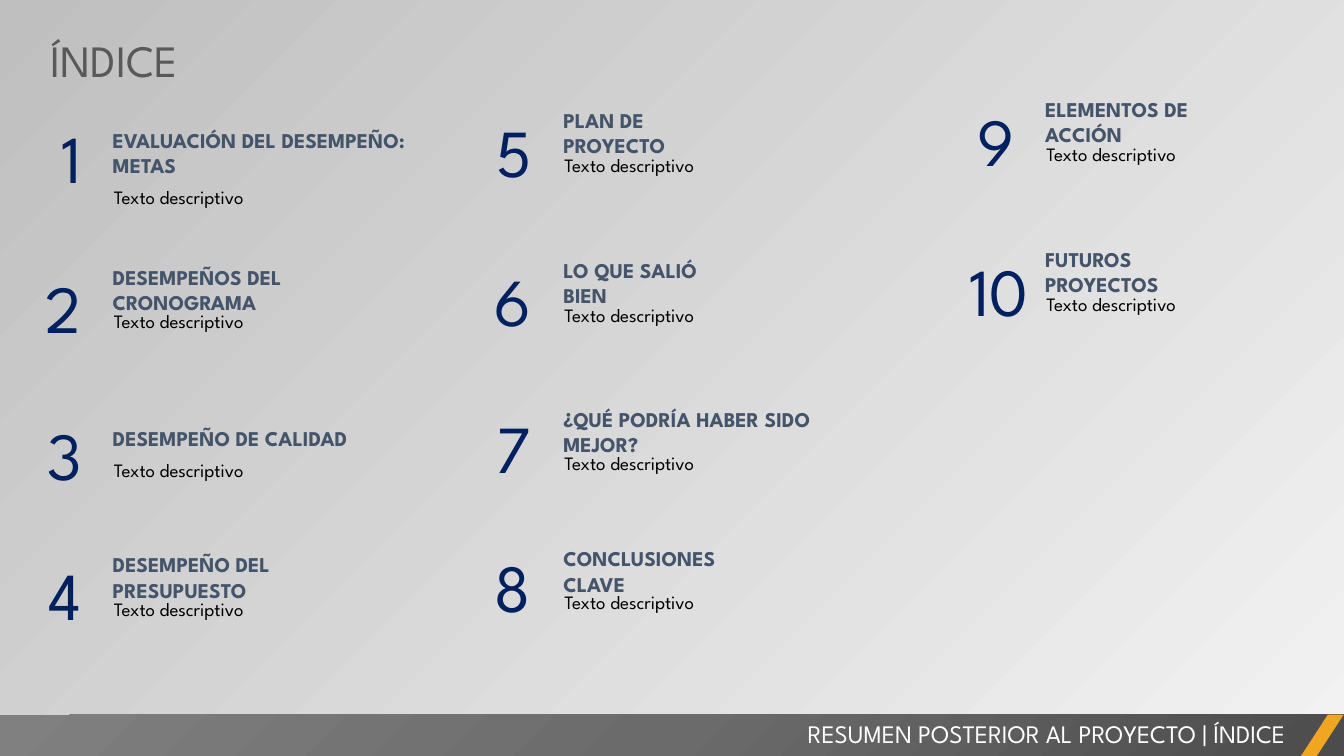
import pptx
import pptx.util
import pptx.oxml
import pptx.dml.color
import pptx.enum.shapes
import pptx.enum.text

ALIGN = pptx.enum.text.PP_ALIGN
ANCHOR = pptx.enum.text.MSO_ANCHOR
SHAPES = pptx.enum.shapes.MSO_SHAPE
RGB = pptx.dml.color.RGBColor.from_string
Pt = pptx.util.Pt

THEME = {
    "font": "League Spartan",
    # text role: size, colour, bold
    "title": (32, "595959", False),
    "number": (48, "002060", False),
    "heading": (15, "44546A", True),
    "detail": (13.5, "000000", False),
    "footer": (18, "FFFFFF", False),
    "background": ("F2F2F2", "BFBFBF"),
    "bar": ((0, "4C4C4C"), (50, "6B6B6B"), (100, "808080")),
    "accent": "F0A622",
}


def px(n):
    """100 px to the inch."""
    return pptx.util.Emu(n * 9144)


def write(sp, box, text, role, align=ALIGN.LEFT, anchor=ANCHOR.TOP,
          insets=(10, 5, 10, 5), line=None, before=0):
    sp.left, sp.top, sp.width, sp.height = map(px, box)
    tf = sp.text_frame
    tf.text = text
    tf.word_wrap = True
    tf.auto_size = pptx.enum.text.MSO_AUTO_SIZE.SHAPE_TO_FIT_TEXT
    tf.vertical_anchor = anchor
    tf.margin_left, tf.margin_top, tf.margin_right, tf.margin_bottom = map(px, insets)
    size, color, bold = THEME[role]
    for p in tf.paragraphs:
        p.alignment = align
        p.space_before = Pt(before)
        if line:
            p.line_spacing = Pt(line)
        p.font.name = THEME["font"]
        p.font.size = Pt(size)
        p.font.bold = bold
        p.font.color.rgb = RGB(color)


prs = pptx.Presentation()
prs.slide_width, prs.slide_height = pptx.util.Inches(13.333), px(750)
s = prs.slides.add_slide(prs.slide_layouts[5])

# Background gradient, light at the bottom right
fill = s.background.fill
fill.gradient()
fill.gradient_angle = 135
for stop, color in zip(fill.gradient_stops, THEME["background"]):
    stop.color.rgb = RGB(color)

# Title
write(s.shapes.title, (40, 27, 455, 64), "ÍNDICE", "title")

# Index columns: left edge of the numbers and of the headings, then entries as
# number top, heading top, heading width, detail top, heading
COLUMNS = [
    (33, 102, [
        (91, 121, 329, 171, "EVALUACIÓN DEL DESEMPEÑO:\nMETAS"),
        (240, 270, 276, 294, "DESEMPEÑOS DEL CRONOGRAMA"),
        (386, 417, 262, 442, "DESEMPEÑO DE CALIDAD"),
        (524, 555, 257, 580, "DESEMPEÑO DEL PRESUPUESTO"),
    ]),
    (479, 549, [
        (85, 114, 166, 139, "PLAN DE PROYECTO"),
        (233, 263, 192, 288, "LO QUE SALIÓ BIEN"),
        (379, 411, 336, 435, "¿QUÉ PODRÍA HABER SIDO MEJOR?"),
        (517, 549, 185, 573, "CONCLUSIONES CLAVE"),
    ]),
    (958, 1027, [
        (74, 103, 162, 128, "ELEMENTOS DE ACCIÓN"),
        (223, 252, 194, 277, "FUTUROS PROYECTOS"),
    ]),
]
number = 0
for number_x, heading_x, entries in COLUMNS:
    for number_y, heading_y, heading_w, detail_y, heading in entries:
        number += 1
        x, w = (number_x, 58) if number < 10 else (number_x - 23, 95)
        heading_h = 61 if "\n" in heading else 35
        write(s.shapes.add_textbox(0, 0, 0, 0), (x, number_y, w, 111),
              str(number), "number", align=ALIGN.RIGHT,
              insets=(10, 35, 10, 5), line=50)
        write(s.shapes.add_textbox(0, 0, 0, 0),
              (heading_x, heading_y, heading_w, heading_h),
              heading, "heading", anchor=ANCHOR.MIDDLE)
        write(s.shapes.add_textbox(0, 0, 0, 0), (heading_x - 1, detail_y, 337, 39),
              "Texto descriptivo", "detail",
              insets=(12, 6, 12, 6), line=21.5, before=2.7)

# Footer bar with a radial gradient, darkest at the bottom right
bar = s.shapes.add_shape(SHAPES.RECTANGLE, 0, px(709), prs.slide_width, px(42))
bar.shadow.inherit = False
bar.line.fill.background()
stops = "".join(f'<a:gs pos="{pos * 1000}"><a:srgbClr val="{color}"/></a:gs>'
                for pos, color in THEME["bar"])
bar.element.spPr.find(pptx.oxml.ns.qn("a:prstGeom")).addnext(pptx.oxml.parse_xml(
    f'<a:gradFill {pptx.oxml.ns.nsdecls("a")} rotWithShape="1"><a:gsLst>{stops}</a:gsLst>'
    '<a:path path="circle"><a:fillToRect l="100000" t="100000"/></a:path></a:gradFill>'))

write(s.shapes.add_textbox(0, 0, 0, 0), (525, 708, 760, 40),
      "RESUMEN POSTERIOR AL PROYECTO | ÍNDICE", "footer", align=ALIGN.RIGHT)

# Slanted accent at the end of the bar
accent = s.shapes.add_shape(SHAPES.PARALLELOGRAM, px(1290), px(709), px(43), px(42))
accent.adjustments[0] = 0.65
accent.shadow.inherit = False
accent.fill.solid()
accent.fill.fore_color.rgb = RGB(THEME["accent"])
accent.line.fill.background()

prs.save("out.pptx")
